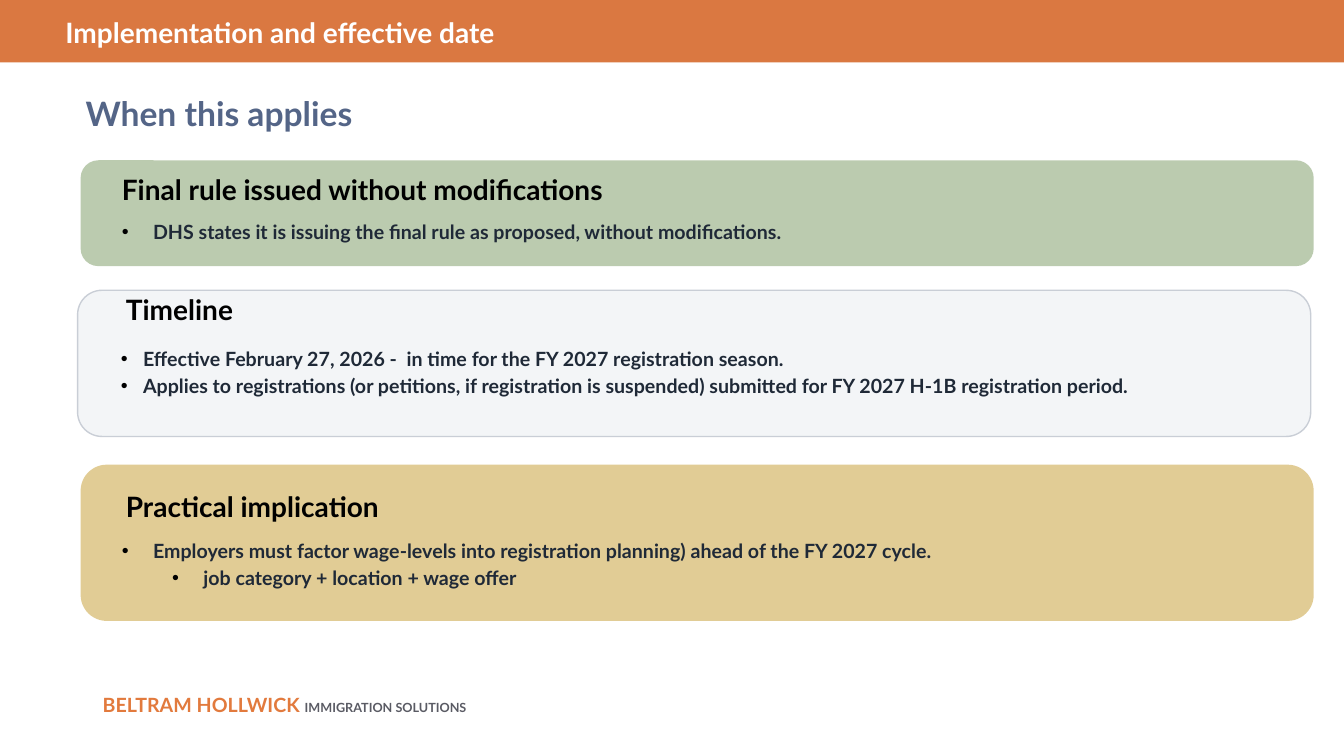
from lxml.etree import SubElement
from pptx import Presentation
from pptx.dml.color import RGBColor
from pptx.enum.shapes import MSO_SHAPE as Shape
from pptx.enum.text import MSO_ANCHOR as Anchor
from pptx.oxml.ns import qn
from pptx.util import Inches, Pt

ORANGE = RGBColor(0xDA, 0x78, 0x41)
FOOTER_ORANGE = RGBColor(0xE2, 0x7A, 0x3D)
FOOTER_GREY = RGBColor(0x5A, 0x5B, 0x64)
WHITE = RGBColor(0xFF, 0xFF, 0xFF)
SLATE = RGBColor(0x54, 0x65, 0x87)
BLACK = RGBColor(0, 0, 0)
INK = RGBColor(0x1F, 0x29, 0x37)
GREEN = RGBColor(0x79, 0x98, 0x61)
GOLD = RGBColor(0xC5, 0x9A, 0x2C)
PALE = RGBColor(0xF3, 0xF5, 0xF7)
BORDER = RGBColor(0xC9, 0xCE, 0xD6)

WIDTH, HEIGHT = 13.33, 7.5
CARD_WIDTH = 12.23
TEXT_WIDTH = 11.98
HEADING_HEIGHT = 0.3
LEVEL_STEP = 0.5

TITLES = [
    ("Implementation and effective date", (0.55, 0.14, 12.2, 0.36), 20, WHITE),
    ("When this applies", (0.75, 0.95, 12, 0.35), 24, SLATE),
]
FOOTER = [("BELTRAM HOLLWICK ", 14, FOOTER_ORANGE), ("IMMIGRATION SOLUTIONS", 9, FOOTER_GREY)]
CARDS = [
    {"heading": "Final rule issued without modifications",
     "bullets": [(0, "DHS states it is issuing the final rule as proposed, without modifications.")],
     "place": (0.8, 1.59, 1.05), "fill": GREEN, "opacity": 50, "border": None,
     "heading_at": (1.11, 1.73), "bullets_at": (1.11, 2.1, 0.4), "indent": 0.31},
    {"heading": "Timeline",
     "bullets": [(0, "Effective February 27, 2026 -  in time for the FY 2027 registration season."),
                 (0, "Applies to registrations (or petitions, if registration is suspended) "
                     "submitted for FY 2027 H-1B registration period.")],
     "place": (0.77, 2.88, 1.45), "fill": PALE, "opacity": 100, "border": BORDER,
     "heading_at": (1.15, 2.92), "bullets_at": (1.1, 3.36, 0.77), "indent": 0.22},
    {"heading": "Practical implication",
     "bullets": [(0, "Employers must factor wage‑levels into registration planning) ahead of the FY 2027 cycle."),
                 (1, "job category + location + wage offer")],
     "place": (0.8, 4.61, 1.55), "fill": GOLD, "opacity": 50, "border": None,
     "heading_at": (1.15, 4.87), "bullets_at": (1.11, 5.26, 0.9), "indent": 0.31},
]


def add_panel(page, kind, place, fill, opacity=100, border=None):
    panel = page.shapes.add_shape(kind, *map(Inches, place))
    panel.shadow.inherit = False
    panel.fill.solid()
    panel.fill.fore_color.rgb = fill
    if opacity < 100:
        color = panel._element.spPr.find(qn("a:solidFill"))[0]
        SubElement(color, qn("a:alpha"), val=str(opacity * 1000))
    if border is None:
        panel.line.fill.background()
    else:
        panel.line.color.rgb = border
        panel.line.width = Pt(1)


def add_frame(page, place, anchor=Anchor.TOP):
    frame = page.shapes.add_textbox(*map(Inches, place)).text_frame
    frame.word_wrap = True
    frame.vertical_anchor = anchor
    return frame


def add_span(para, text, size, color):
    span = para.add_run()
    span.text = text
    span.font.color.rgb = color
    for name, value in {"name": "Lato", "size": Pt(size), "bold": True}.items():
        setattr(span.font, name, value)


def add_title(page, text, place, size, color):
    frame = add_frame(page, place, Anchor.MIDDLE)
    add_span(frame.paragraphs[0], text, size, color)


def add_bullets(page, place, bullets, indent):
    frame = add_frame(page, place)
    for index, (level, text) in enumerate(bullets):
        para = frame.add_paragraph() if index else frame.paragraphs[0]
        para.level = level
        para.line_spacing = 1.15
        props = para._p.get_or_add_pPr()
        props.set("marL", str(Inches(indent + level * LEVEL_STEP)))
        props.set("indent", str(-Inches(indent)))
        SubElement(SubElement(props, qn("a:buClr")), qn("a:srgbClr"), val=str(BLACK))
        SubElement(props, qn("a:buFont"), typeface="Arial")
        SubElement(props, qn("a:buChar"), char="•")
        add_span(para, text, 14, INK)


def add_card(page, card):
    left, top, height = card["place"]
    add_panel(page, Shape.ROUNDED_RECTANGLE, (left, top, CARD_WIDTH, height),
              card["fill"], card["opacity"], card["border"])
    add_title(page, card["heading"], (*card["heading_at"], TEXT_WIDTH, HEADING_HEIGHT), 20, BLACK)
    left, top, height = card["bullets_at"]
    add_bullets(page, (left, top, TEXT_WIDTH, height), card["bullets"], card["indent"])


def main():
    deck = Presentation()
    deck.slide_width, deck.slide_height = Inches(WIDTH), Inches(HEIGHT)
    page = deck.slides.add_slide(deck.slide_layouts[6])
    footer = add_frame(page, (0.92, 6.83, 6.6, 0.64))
    for text, size, color in FOOTER:
        add_span(footer.paragraphs[0], text, size, color)
    add_panel(page, Shape.RECTANGLE, (0, 0, WIDTH, 0.62), ORANGE)
    for title in TITLES:
        add_title(page, *title)
    for card in CARDS:
        add_card(page, card)
    deck.save("out.pptx")


if __name__ == "__main__":
    main()
